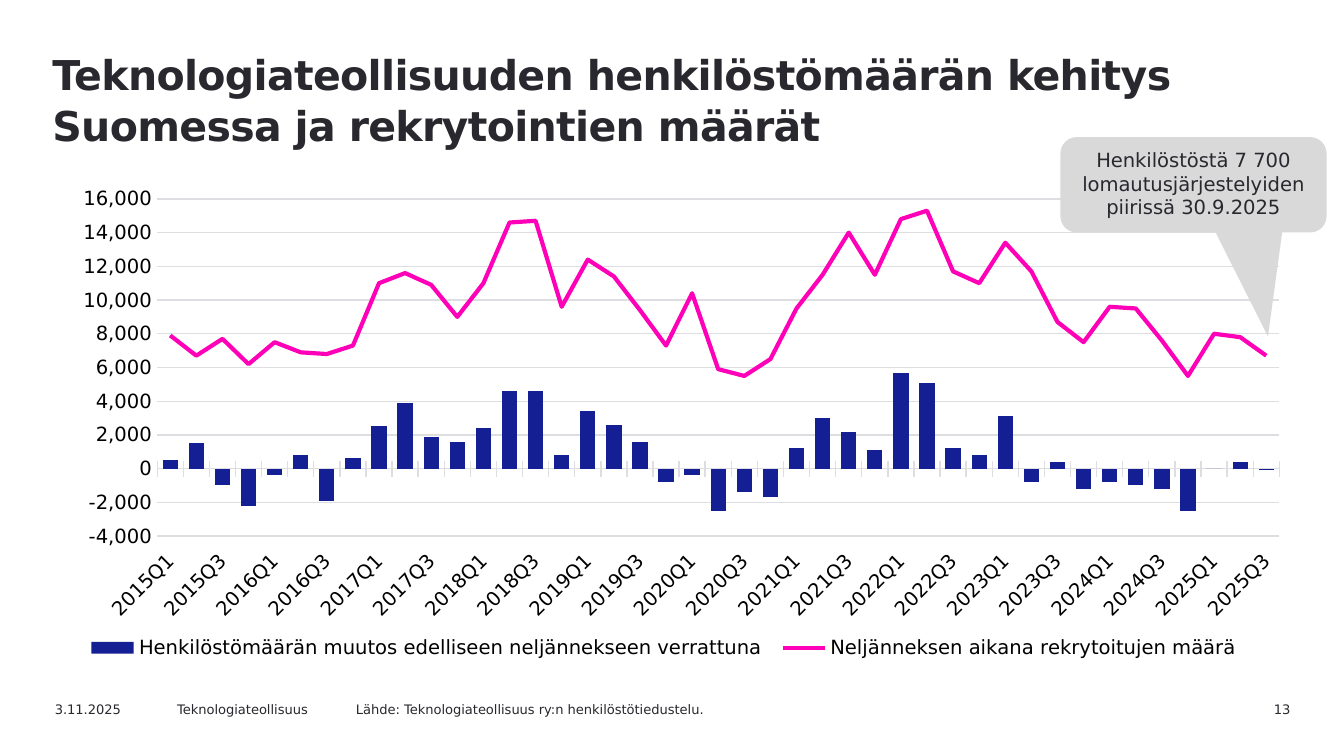
import copy
import pptx
import pptx.util
import pptx.oxml
import pptx.oxml.ns
import pptx.dml.color
import pptx.chart.data
import pptx.enum.chart
import pptx.enum.shapes
import pptx.enum.text

Inches, Pt = pptx.util.Inches, pptx.util.Pt
enum = pptx.enum
FONT, INK, GRID = "DejaVu Sans", "29282E", "DEDDE1"

title = "Teknologiateollisuuden henkilöstömäärän kehitys Suomessa ja rekrytointien määrät"
note = "Henkilöstöstä 7 700 lomautusjärjestelyiden piirissä 30.9.2025"
feet = [
    ("3.11.2025", 0.31, 1, "LEFT"),
    ("Teknologiateollisuus", 1.22, 1.42, "LEFT"),
    ("Lähde: Teknologiateollisuus ry:n henkilöstötiedustelu.", 2.55, 3.25, "LEFT"),
    ("13", 8.76, 0.94, "RIGHT"),
]
change = ("Henkilöstömäärän muutos edelliseen neljännekseen verrattuna", [
    500, 1500, -1000, -2200, -400, 800, -1900, 600, 2500, 3900, 1900, 1600,
    2400, 4600, 4600, 800, 3400, 2600, 1600, -800, -400, -2500, -1400, -1700,
    1200, 3000, 2200, 1100, 5700, 5100, 1200, 800, 3100, -800, 400, -1200,
    -800, -1000, -1200, -2500, 0, 400, -100])
hires = ("Neljänneksen aikana rekrytoitujen määrä", [
    7900, 6700, 7700, 6200, 7500, 6900, 6800, 7300, 11000, 11600, 10900, 9000,
    11000, 14600, 14700, 9600, 12400, 11400, 9400, 7300, 10400, 5900, 5500, 6500,
    9500, 11500, 14000, 11500, 14800, 15300, 11700, 11000, 13400, 11700, 8700, 7500,
    9600, 9500, 7600, 5500, 8000, 7800, 6700])
chart_box = (0.28, 1.24, 9.29, 3.78)
plot_box = (0.89, 0.24, 8.35, 2.51)
key_box = (0.3, 3.43, 8.72, 0.3)


def color(code):
    return pptx.dml.color.RGBColor.from_string(code)


def style(font, size, code=INK, bold=False):
    font.name, font.size, font.bold = FONT, Pt(size), bold
    font.color.rgb = color(code)


def stroke(line, code, width):
    line.color.rgb, line.width = color(code), Pt(width)


def write(shape, text, size, align, anchor, bold=False):
    frame = shape.text_frame
    frame.text = text
    frame.word_wrap = True
    frame.auto_size = enum.text.MSO_AUTO_SIZE.NONE
    frame.vertical_anchor = enum.text.MSO_ANCHOR[anchor]
    para = frame.paragraphs[0]
    para.alignment = enum.text.PP_ALIGN[align]
    style(para.runs[0].font, size, bold=bold)
    return para


def node(tag, inner="", **attrs):
    text = "".join(f' {key}="{val}"' for key, val in attrs.items())
    names = pptx.oxml.ns.nsdecls("c")
    return pptx.oxml.parse_xml(f"<c:{tag} {names}{text}>{inner}</c:{tag}>")


def add_head(slide):
    head = slide.shapes.title
    head.left, head.top, head.width, head.height = map(Inches, (0.28, 0.31, 8.74, 0.71))
    para = write(head, title, 22, "LEFT", "TOP", True)
    para.line_spacing = Pt(27)
    props = para._p.get_or_add_pPr()
    props.set("marL", str(Inches(0.01)))
    props.set("indent", "0")
    para.runs[0]._r.get_or_add_rPr().set("spc", "-35")


def split_line(chart):
    bars = chart.plots[0]._element
    ser = bars.findall(pptx.oxml.ns.qn("c:ser"))[1]
    line = node("lineChart", '<c:grouping val="standard"/><c:varyColors val="0"/>')
    for flip in ser.findall(pptx.oxml.ns.qn("c:invertIfNegative")):
        ser.remove(flip)
    line.append(ser)
    line.append(node("marker", val=1))
    for axis in bars.findall(pptx.oxml.ns.qn("c:axId")):
        line.append(copy.deepcopy(axis))
    bars.addnext(line)


def place(part, index, box, target=""):
    for old in part.findall(pptx.oxml.ns.qn("c:layout")):
        part.remove(old)
    left, top, width, height = box
    wide, high = chart_box[2:]
    shares = {"x": left / wide, "y": top / high, "w": width / wide, "h": height / high}
    inner = target + "".join(f'<c:{key}Mode val="edge"/>' for key in "xy")
    inner += "".join(f'<c:{key} val="{val:.4f}"/>' for key, val in shares.items())
    part.insert(index, node("layout", f"<c:manualLayout>{inner}</c:manualLayout>"))


def style_axes(chart):
    cat, val = chart.category_axis, chart.value_axis
    for axis in (cat, val):
        style(axis.tick_labels.font, 10.5, "000000")
        axis.minor_tick_mark = enum.chart.XL_TICK_MARK.NONE
    cat.major_tick_mark = enum.chart.XL_TICK_MARK.CROSS
    cat.tick_label_position = enum.chart.XL_TICK_LABEL_POSITION.LOW
    stroke(cat.format.line, GRID, 0.75)
    body = cat._element.find(".//" + pptx.oxml.ns.qn("a:bodyPr"))
    body.set("rot", "-2700000")
    body.set("vert", "horz")
    last = cat._element.find(pptx.oxml.ns.qn("c:noMultiLvlLbl"))
    last.addprevious(node("tickLblSkip", val=2))
    val.major_tick_mark = enum.chart.XL_TICK_MARK.NONE
    val.minimum_scale, val.maximum_scale, val.major_unit = -4000, 16000, 2000
    val.tick_labels.number_format = "#,##0"
    val.tick_labels.number_format_is_linked = False
    val.format.line.fill.background()
    stroke(val.major_gridlines.format.line, GRID, 0.75)


def add_plot(slide):
    data = pptx.chart.data.CategoryChartData(number_format="#,##0")
    data.categories = [f"{2015 + i // 4}Q{i % 4 + 1}" for i in range(len(change[1]))]
    for name, vals in (change, hires):
        data.add_series(name, vals)
    kind = enum.chart.XL_CHART_TYPE.COLUMN_CLUSTERED
    chart = slide.shapes.add_chart(kind, *map(Inches, chart_box), data).chart
    style(chart.font, 10)
    chart.has_title = False
    split_line(chart)
    place(chart._chartSpace.chart.plotArea, 0, plot_box, '<c:layoutTarget val="inner"/>')
    style_axes(chart)
    bars, line = chart.plots
    bars.gap_width, bars.overlap, bars.vary_by_categories = 70, -21, False
    fill = bars.series[0].format.fill
    fill.solid()
    fill.fore_color.rgb = color("141F94")
    bars.series[0].invert_if_negative = False
    curve = line.series[0]
    curve.smooth = False
    curve.marker.style = enum.chart.XL_MARKER_STYLE.NONE
    stroke(curve.format.line, "FF00B8", 2.25)
    chart.has_legend = True
    chart.legend.position = enum.chart.XL_LEGEND_POSITION.BOTTOM
    chart.legend.include_in_layout = False
    style(chart.legend.font, 10.5, "000000")
    place(chart.legend._element, 1, key_box)


def add_note(slide):
    kind = enum.shapes.MSO_SHAPE.ROUNDED_RECTANGULAR_CALLOUT
    shape = slide.shapes.add_shape(kind, *map(Inches, (7.89, 1.02, 1.98, 0.71)))
    for i, val in enumerate((0.28, 1.59, 0.17)):
        shape.adjustments[i] = val
    shape.shadow.inherit = False
    shape.fill.solid()
    shape.fill.fore_color.rgb = color("D9D9D9")
    shape.line.fill.background()
    shape.text_frame.margin_bottom = Inches(0.07)
    write(shape, note, 10.5, "CENTER", "MIDDLE")


def add_feet(slide):
    for text, left, width, align in feet:
        box = slide.shapes.add_textbox(*map(Inches, (left, 5.17, width, 0.18)))
        write(box, text, 7, align, "TOP")


def main():
    deck = pptx.Presentation()
    deck.slide_width = Inches(10)
    deck.slide_height = deck.slide_width * 9 // 16
    slide = deck.slides.add_slide(deck.slide_layouts[5])
    add_head(slide)
    add_feet(slide)
    add_plot(slide)
    add_note(slide)
    deck.save("out.pptx")


if __name__ == "__main__":
    main()
